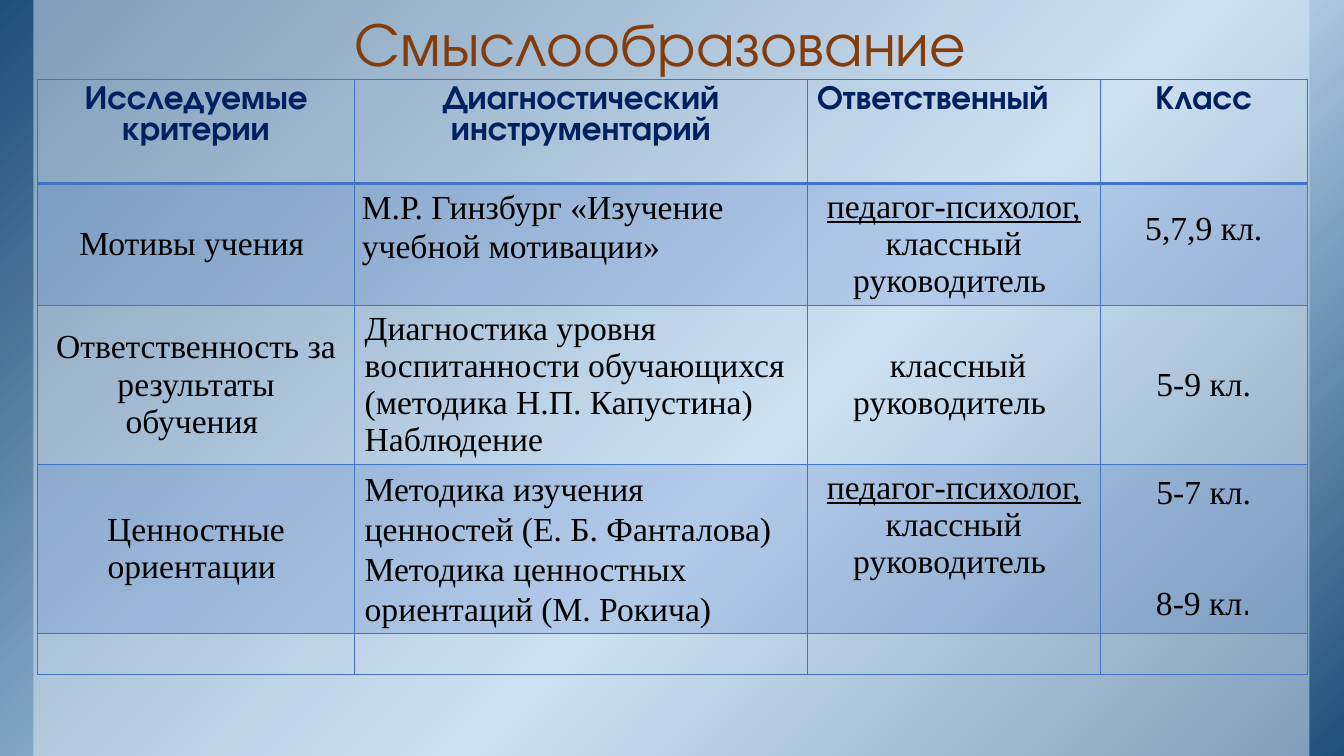
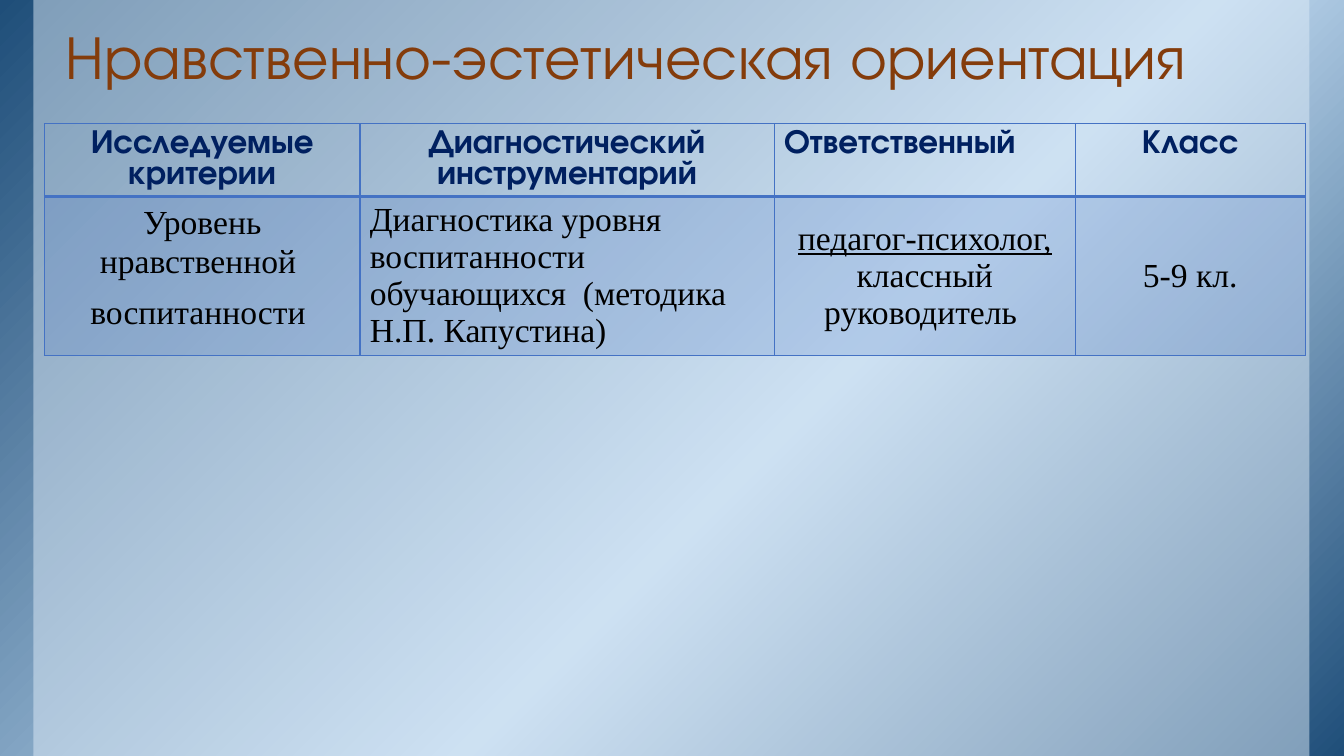
from copy import deepcopy
from dataclasses import dataclass

from pptx import Presentation
from pptx.dml.color import RGBColor
from pptx.enum.shapes import MSO_SHAPE
from pptx.enum.text import MSO_ANCHOR, MSO_AUTO_SIZE, PP_ALIGN
from pptx.oxml.ns import qn
from pptx.oxml.xmlchemy import OxmlElement
from pptx.slide import Slide, SlideLayout
from pptx.table import _Cell
from pptx.util import Cm, Pt

# Shared colours, fonts and sizes
DARK_BLUE = RGBColor(0x1F, 0x4E, 0x79)
LIGHT_BLUE = RGBColor(0xBD, 0xD7, 0xEE)
PANEL_BLUE = RGBColor(0xDE, 0xEB, 0xF7)
TITLE_BROWN = RGBColor(0x84, 0x3C, 0x0B)
HEADER_NAVY = RGBColor(0x00, 0x20, 0x60)
GRID_BLUE = RGBColor(0x44, 0x72, 0xC4)
BLACK = RGBColor(0x00, 0x00, 0x00)
DISPLAY_FONT = "TeX Gyre Adventor"
BODY_FONT = "Times New Roman"
SLIDE_WIDTH, SLIDE_HEIGHT = Cm(33.87), Cm(19.05)
TITLE_SIZE, TABLE_SIZE = Pt(44), Pt(24)
TITLE_HEIGHT = Cm(2.16)
GRID_WIDTH, HEADER_RULE_WIDTH = Pt(1), Pt(2)


@dataclass(frozen=True)
class TextRun:
    text: str
    underline: bool = False
    font: str = BODY_FONT
    color: RGBColor = BLACK
    bold: bool = False


@dataclass(frozen=True)
class TextParagraph:
    runs: tuple[TextRun, ...]
    align: PP_ALIGN = PP_ALIGN.CENTER
    line_spacing: float | None = None
    space_before: float = 0
    space_after: float = 0


@dataclass(frozen=True)
class CellContent:
    paragraphs: tuple[TextParagraph, ...] = ()
    anchor: MSO_ANCHOR = MSO_ANCHOR.MIDDLE
    # Left, top, right, bottom in centimetres
    margins: tuple[float, float, float, float] = (0.25, 0.13, 0.25, 0.13)


@dataclass(frozen=True)
class TableSlide:
    title: str
    title_left: float
    title_top: float
    title_width: float
    title_align: PP_ALIGN
    table_left: float
    table_top: float
    column_widths: tuple[float, ...]
    row_heights: tuple[float, ...]
    body: tuple[tuple[CellContent, ...], ...]


def centered(*texts: str) -> CellContent:
    return CellContent(tuple(TextParagraph((TextRun(text),)) for text in texts))


def listed(*texts: str, anchor: MSO_ANCHOR = MSO_ANCHOR.TOP) -> CellContent:
    paragraphs = (TextParagraph((TextRun(text),), PP_ALIGN.LEFT) for text in texts)
    return CellContent(tuple(paragraphs), anchor)


def spaced(text: str, align: PP_ALIGN = PP_ALIGN.LEFT) -> TextParagraph:
    return TextParagraph((TextRun(text),), align, line_spacing=1.07, space_after=8)


def header(text: str, align: PP_ALIGN = PP_ALIGN.CENTER) -> CellContent:
    run = TextRun(text, font=DISPLAY_FONT, color=HEADER_NAVY, bold=True)
    return CellContent((TextParagraph((run,), align),), MSO_ANCHOR.TOP)


def psychologist(anchor: MSO_ANCHOR = MSO_ANCHOR.TOP) -> CellContent:
    runs = (TextRun("педагог-психолог,", underline=True), TextRun(CLASS_TEACHER))
    return CellContent((TextParagraph(runs),), anchor)


# Wording used on both slides
CLASS_TEACHER = " классный руководитель "
KAPUSTIN_METHOD = (
    "Диагностика уровня воспитанности обучающихся  (методика Н.П. Капустина)"
)
HEADER_ROW = (
    header("Исследуемые критерии"),
    header("Диагностический инструментарий"),
    header("Ответственный", PP_ALIGN.LEFT),
    header("Класс"),
)

SLIDES = (
    TableSlide(
        "Смыслообразование", 2.54, 0, 28.22, PP_ALIGN.CENTER,
        table_left=0.94,
        table_top=2,
        column_widths=(8, 11.4, 7.39, 5.21),
        row_heights=(2.62, 3.06, 4.01, 4.26, 1.03),
        body=(
            (
                centered("Мотивы учения "),
                CellContent(
                    (spaced("М.Р. Гинзбург «Изучение учебной мотивации»"),),
                    MSO_ANCHOR.TOP,
                    (0.18, 0.08, 0, 0),
                ),
                psychologist(),
                CellContent(
                    centered("5,7,9 кл.").paragraphs, margins=(0.25, 0.13, 0.25, 0.9)
                ),
            ),
            (
                centered("Ответственность за результаты обучения "),
                listed(KAPUSTIN_METHOD, "Наблюдение"),
                centered(CLASS_TEACHER),
                centered("5-9 кл."),
            ),
            (
                centered("Ценностные ориентации "),
                CellContent(
                    (
                        spaced(
                            "Методика изучения ценностей (Е. Б. Фанталова) "
                            "Методика ценностных ориентаций (М. Рокича)"
                        ),
                    ),
                    MSO_ANCHOR.TOP,
                ),
                psychologist(),
                CellContent(
                    (
                        TextParagraph((TextRun("5-7 кл."),)),
                        TextParagraph(
                            (TextRun("8-9 кл"), TextRun(".", font=DISPLAY_FONT)),
                            space_before=53,
                        ),
                    )
                ),
            ),
            (CellContent(),) * 4,
        ),
    ),
    TableSlide(
        "Нравственно-эстетическая ориентация", 1.32, 0.33, 32.21, PP_ALIGN.LEFT,
        table_left=1.12,
        table_top=3.12,
        column_widths=(7.95, 10.44, 7.59, 5.79),
        row_heights=(1.83, 3.99),
        body=(
            (
                CellContent(
                    (
                        spaced("Уровень нравственной ", PP_ALIGN.CENTER),
                        spaced("воспитанности ", PP_ALIGN.CENTER),
                    ),
                    MSO_ANCHOR.TOP,
                ),
                listed(KAPUSTIN_METHOD, anchor=MSO_ANCHOR.MIDDLE),
                psychologist(MSO_ANCHOR.MIDDLE),
                centered("5-9 кл."),
            ),
        ),
    ),
)


def set_opacity(element, percent: int) -> None:
    alpha = OxmlElement("a:alpha")
    alpha.set("val", str(percent * 1000))
    element.find(".//" + qn("a:srgbClr")).append(alpha)


def add_background(slide: Slide, layout: SlideLayout) -> None:
    """Build the gradient and the pale panel, then place them on the layout."""
    backdrop = slide.shapes.add_shape(
        MSO_SHAPE.RECTANGLE, 0, 0, SLIDE_WIDTH, SLIDE_HEIGHT
    )
    backdrop.fill.gradient()
    backdrop.fill.gradient_angle = 315
    stop_list = backdrop.element.spPr.find(".//" + qn("a:gsLst"))
    stop_list.append(deepcopy(stop_list[0]))
    colors = ((0, DARK_BLUE), (0.58, LIGHT_BLUE), (1, DARK_BLUE))
    for stop, (position, color) in zip(backdrop.fill.gradient_stops, colors):
        stop.position = position
        stop.color.rgb = color

    panel = slide.shapes.add_shape(
        MSO_SHAPE.RECTANGLE, Cm(0.84), 0, Cm(32.16), SLIDE_HEIGHT
    )
    panel.fill.solid()
    panel.fill.fore_color.rgb = PANEL_BLUE
    set_opacity(panel.element.spPr, 50)

    for index, shape in enumerate((backdrop, panel)):
        shape.shadow.inherit = False
        shape.line.fill.background()
        shape.element.nvSpPr.cNvPr.set("id", str(100 + index))
        layout.shapes.element.insert(2 + index, shape.element)


def add_title(slide: Slide, content: TableSlide) -> None:
    title = slide.shapes.title
    title.left, title.top = Cm(content.title_left), Cm(content.title_top)
    title.width, title.height = Cm(content.title_width), TITLE_HEIGHT
    frame = title.text_frame
    frame.auto_size = MSO_AUTO_SIZE.NONE
    frame.word_wrap = True
    frame.vertical_anchor = MSO_ANCHOR.BOTTOM
    frame.margin_left = frame.margin_right = Cm(0.34)
    frame.margin_top = frame.margin_bottom = Cm(0.17)
    paragraph = frame.paragraphs[0]
    paragraph.alignment = content.title_align
    paragraph.line_spacing = 0.85
    run = paragraph.add_run()
    run.text = content.title
    run.font.name, run.font.size = DISPLAY_FONT, TITLE_SIZE
    run.font.color.rgb = TITLE_BROWN


def set_borders(cell: _Cell, bottom_width: Pt) -> None:
    properties = cell._tc.get_or_add_tcPr()
    for side in ("L", "R", "T", "B"):
        line = OxmlElement(f"a:ln{side}")
        line.set("w", str(bottom_width if side == "B" else GRID_WIDTH))
        fill = OxmlElement("a:solidFill")
        color = OxmlElement("a:srgbClr")
        color.set("val", str(GRID_BLUE))
        fill.append(color)
        line.append(fill)
        properties.append(line)


def fill_cell(cell: _Cell, content: CellContent, shaded: bool) -> None:
    if shaded:
        cell.fill.solid()
        cell.fill.fore_color.rgb = GRID_BLUE
        set_opacity(cell._tc.tcPr.find(qn("a:solidFill")), 20)
    else:
        cell.fill.background()
    cell.vertical_anchor = content.anchor
    left, top, right, bottom = content.margins
    cell.margin_left, cell.margin_top = Cm(left), Cm(top)
    cell.margin_right, cell.margin_bottom = Cm(right), Cm(bottom)
    frame = cell.text_frame
    for index, item in enumerate(content.paragraphs):
        paragraph = frame.add_paragraph() if index else frame.paragraphs[0]
        paragraph.alignment = item.align
        paragraph.line_spacing = item.line_spacing
        paragraph.space_before = Pt(item.space_before)
        paragraph.space_after = Pt(item.space_after)
        for text_run in item.runs:
            run = paragraph.add_run()
            run.text = text_run.text
            run.font.name, run.font.size = text_run.font, TABLE_SIZE
            run.font.bold, run.font.underline = text_run.bold, text_run.underline
            run.font.color.rgb = text_run.color


def add_criteria_table(slide: Slide, content: TableSlide) -> None:
    rows = (HEADER_ROW, *content.body)
    table = slide.shapes.add_table(
        len(rows), len(HEADER_ROW), Cm(content.table_left), Cm(content.table_top),
        Cm(sum(content.column_widths)), Cm(sum(content.row_heights)),
    ).table
    for column, width in zip(table.columns, content.column_widths):
        column.width = Cm(width)
    for row, height in zip(table.rows, content.row_heights):
        row.height = Cm(height)
    for row_index, cells in enumerate(rows):
        for column_index, cell_content in enumerate(cells):
            cell = table.cell(row_index, column_index)
            set_borders(cell, GRID_WIDTH if row_index else HEADER_RULE_WIDTH)
            fill_cell(cell, cell_content, shaded=row_index % 2 == 1)


def main() -> None:
    presentation = Presentation()
    presentation.slide_width, presentation.slide_height = SLIDE_WIDTH, SLIDE_HEIGHT
    layout = presentation.slide_layouts[5]
    for index, content in enumerate(SLIDES):
        slide = presentation.slides.add_slide(layout)
        if index == 0:
            add_background(slide, layout)
        add_title(slide, content)
        add_criteria_table(slide, content)
    presentation.save("out.pptx")


if __name__ == "__main__":
    main()
